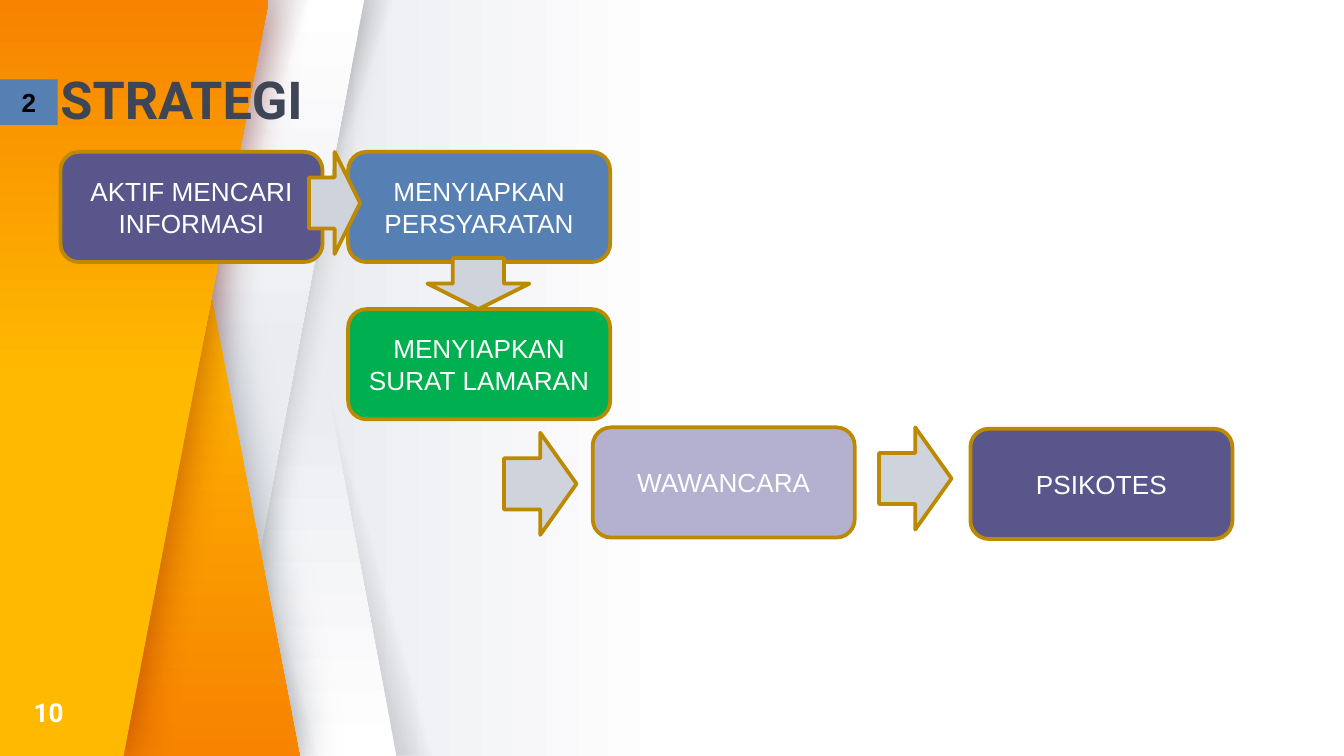
from lxml import etree
from pptx import Presentation
from pptx.dml.color import RGBColor
from pptx.enum.shapes import MSO_SHAPE
from pptx.enum.text import MSO_ANCHOR, PP_ALIGN
from pptx.oxml.ns import qn
from pptx.util import Inches, Pt

PARALLELOGRAM = MSO_SHAPE.PARALLELOGRAM
ROUNDED = MSO_SHAPE.ROUNDED_RECTANGLE
RECTANGLE = MSO_SHAPE.RECTANGLE
DOWN_ARROW = MSO_SHAPE.DOWN_ARROW
MIDDLE, BOTTOM = MSO_ANCHOR.MIDDLE, MSO_ANCHOR.BOTTOM
CENTER, LEFT = PP_ALIGN.CENTER, PP_ALIGN.LEFT
rgb = RGBColor.from_string


def set_gradient(fill, parent, stops, angle):
    """Fill with (position %, colour, opacity %) stops, angle clockwise."""
    fill.solid()
    gradient = etree.Element(qn("a:gradFill"), rotWithShape="1")
    stop_list = etree.SubElement(gradient, qn("a:gsLst"))
    for position, color, opacity in stops:
        stop = etree.SubElement(stop_list, qn("a:gs"), pos=str(position * 1000))
        tint = etree.SubElement(stop, qn("a:srgbClr"), val=color)
        if opacity < 100:
            etree.SubElement(tint, qn("a:alpha"), val=str(opacity * 1000))
    etree.SubElement(gradient, qn("a:lin"), ang=str(angle * 60000), scaled="0")
    parent.replace(parent.find(qn("a:solidFill")), gradient)


def write(shape, text, size, font, color, bold=False, align=CENTER, anchor=MIDDLE):
    frame = shape.text_frame
    frame.word_wrap = True
    frame.vertical_anchor = anchor
    frame.text = text
    paragraph = frame.paragraphs[0]
    paragraph.alignment = align
    run_font = paragraph.runs[0].font
    run_font.size, run_font.name, run_font.bold = Pt(size), font, bold
    run_font.color.rgb = rgb(color)
    return paragraph


prs = Presentation()
prs.slide_width, prs.slide_height = Inches(10), Inches(5.625)
slide = prs.slides.add_slide(prs.slide_layouts[6])
shapes = slide.shapes

# Background
backdrop = slide.background.fill
backdrop.solid()
set_gradient(backdrop, slide._element.find(".//" + qn("p:bgPr")),
             [(0, "FFFFFF", 100), (50, "FFFFFF", 100),
              (76, "EAECF0", 100), (100, "EAECF0", 100)], 180)

# Folded ribbons on the left, each over a slanted shade
shade_stops = [(0, "3E4655", 100), (13, "3E4655", 100),
               (55, "27252C", 0), (100, "27252C", 0)]
white_stops = [(0, "FFFFFF", 100), (47, "EAECF0", 100), (100, "EAECF0", 100)]
lower_stops = [(0, "FFB900", 100), (37, "FFB900", 100), (100, "F78300", 100)]
upper_stops = [(0, "FFB900", 100), (50, "FFB900", 100), (100, "F78300", 100)]
lower_outline = [(0, 0), (0, 5.625), (2.23, 5.625), (1.15, 0)]
upper_outline = [(0, 5.625), (0, 0), (2, 0), (0.92, 5.625)]

# left, outline, slant, mirrored, stops, angle, glow (colour, opacity %, blur pt)
ribbons = [
    (1.07, None, 0.753, True, shade_stops, 196, None),
    (0.65, None, 0.463, True, white_stops, 270, None),
    (0.65, None, 0.753, False, shade_stops, 18, None),
    (0.41, None, 0.463, False, white_stops, 90, ("000000", 20, 16.9)),
    (0.22, None, 0.753, True, shade_stops, 196, None),
    (0, lower_outline, None, False, lower_stops, 90, ("3E4655", 50, 24.8)),
    (0.03, None, 0.753, False, shade_stops, 18, None),
    (0, upper_outline, None, False, upper_stops, 270, ("7E0808", 50, 24.8)),
]
for left, outline, slant, mirrored, stops, angle, glow in ribbons:
    if outline:
        points = [(Inches(x), Inches(y)) for x, y in outline]
        builder = shapes.build_freeform(*points[0])
        builder.add_line_segments(points[1:], close=True)
        ribbon = builder.convert_to_shape()
    else:
        ribbon = shapes.add_shape(PARALLELOGRAM, Inches(left), 0, Inches(2.3), Inches(5.625))
        ribbon.adjustments[0] = slant
    properties = ribbon._element.spPr
    if mirrored:
        properties.find(qn("a:xfrm")).set("flipH", "1")
    set_gradient(ribbon.fill, properties, stops, angle)
    ribbon.line.fill.background()
    ribbon.shadow.inherit = False
    if glow:
        color, opacity, blur = glow
        shadow = etree.SubElement(properties.find(qn("a:effectLst")), qn("a:outerShdw"),
                                  blurRad=str(Pt(blur)), dist="0", dir="0",
                                  algn="ctr", rotWithShape="0")
        tint = etree.SubElement(shadow, qn("a:srgbClr"), val=color)
        etree.SubElement(tint, qn("a:alpha"), val=str(opacity * 1000))

# Page number and title
for text, left, top, width, height, size, color, anchor, spacing in [
    ("10", 0.25, 5.16, 0.4, 0.27, 14, "FFFFFF", MIDDLE, 1.0),
    ("STRATEGI", 0.45, 0.54, 5.98, 0.43, 28, "3E4655", BOTTOM, 0.9),
]:
    label = shapes.add_textbox(Inches(left), Inches(top), Inches(width), Inches(height))
    frame = label.text_frame
    frame.margin_left = frame.margin_right = frame.margin_top = frame.margin_bottom = 0
    paragraph = write(label, text, size, "Roboto", color, True, LEFT, anchor)
    paragraph.line_spacing = spacing

# Steps
for text, left, top, color in [
    ("AKTIF MENCARI INFORMASI", 0.45, 1.13, "59568B"),
    ("MENYIAPKAN PERSYARATAN", 2.59, 1.13, "5680B4"),
    ("MENYIAPKAN SURAT LAMARAN", 2.59, 2.3, "00B050"),
    ("WAWANCARA", 4.41, 3.18, "B3B1CF"),
    ("PSIKOTES", 7.22, 3.19, "59568B"),
]:
    step = shapes.add_shape(ROUNDED, Inches(left), Inches(top), Inches(1.95), Inches(0.82))
    step.shadow.inherit = False
    step.fill.solid()
    step.fill.fore_color.rgb = rgb(color)
    step.line.color.rgb = rgb("BD8900")
    step.line.width = Pt(2)
    write(step, text, 14, "Arial", "FFFFFF")

# Section number
section = shapes.add_shape(RECTANGLE, 0, Inches(0.59), Inches(0.43), Inches(0.34))
section.shadow.inherit = False
section.fill.solid()
section.fill.fore_color.rgb = rgb("5680B4")
section.line.fill.background()
write(section, "2", 14, "Arial", "000000", True)

# Arrows between steps
for left, top, length, rotation in [
    (2.11, 1.32, 0.38, 270),
    (3.18, 1.92, 0.38, 0),
    (3.64, 3.33, 0.54, 270),
    (6.43, 3.29, 0.54, 270),
]:
    arrow = shapes.add_shape(DOWN_ARROW, Inches(left), Inches(top), Inches(0.76), Inches(length))
    arrow.rotation = rotation
    arrow.shadow.inherit = False
    arrow.fill.solid()
    arrow.fill.fore_color.rgb = rgb("CED3DC")
    arrow.line.color.rgb = rgb("BD8900")
    arrow.line.width = Pt(2)

prs.save("out.pptx")
